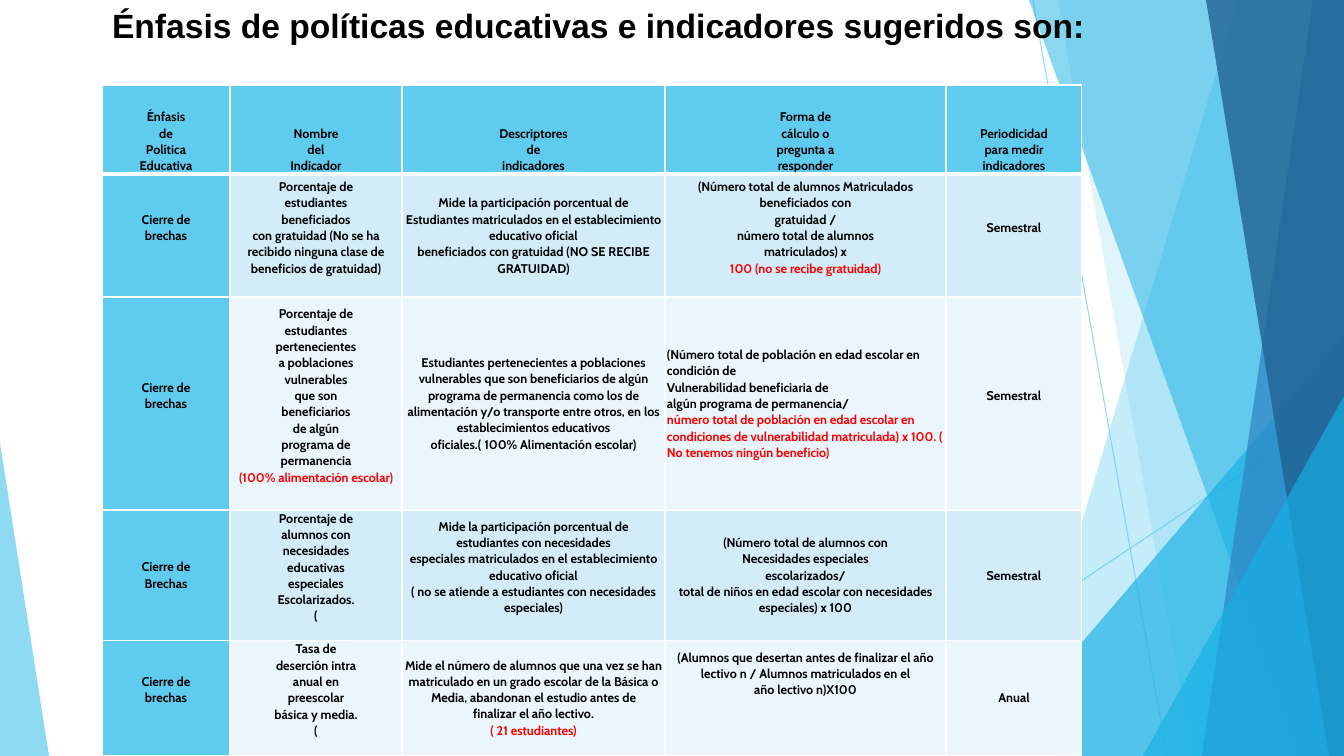
"""Build a slide with a table of education policies and indicators."""
import dataclasses
import typing

import lxml.etree
import pptx
import pptx.dml.color
import pptx.enum.shapes
import pptx.enum.text
import pptx.oxml.ns
import pptx.util

SCALE = 914400 / 100.8
WIDE, HIGH = 1344, 756
LINE = 16
SKY, CYAN, WHITE, BLACK, RED = "5FCBEF", "17B0E4", "FFFFFF", "000000", "FF0000"
BANDS = ("D2ECF9", "EAF6FC")
COLS = (128, 172, 263, 281, 136)
ROWS = (89, 123, 213, 130, 115)
ALIGN = pptx.enum.text.PP_ALIGN
ANCHOR = pptx.enum.text.MSO_ANCHOR
TITLE = "Énfasis de políticas educativas e indicadores sugeridos son:"


@dataclasses.dataclass
class Ray:
    start: tuple[int, int]
    end: tuple[int, int]


@dataclasses.dataclass
class Band:
    top: int
    base: int
    color: str
    alpha: int


@dataclasses.dataclass
class Peak:
    box: tuple[int, int, int, int]
    tip: int
    color: str
    alpha: int


@dataclasses.dataclass
class Entry:
    text: str
    gap: int = 0
    red: bool = False
    left: bool = False


RAYS = (Ray((1033, 0), (1167, HIGH)), Ray((WIDE, 406), (818, HIGH)))
FACETS = (
    Band(1238, 1012, SKY, 36),
    Band(1058, 1192, SKY, 20),
    Peak((985, 336, 359, 420), 1, CYAN, 66),
    Band(1029, 1301, CYAN, 50),
    Band(1313, 1202, "2E83C3", 70),
    Band(1206, 1329, "226292", 80),
    Peak((1143, 396, 201, 360), 1, CYAN, 66),
    Peak((0, 443, 49, 313), 0, SKY, 70),
)
GRID = (
    (
        Entry("Énfasis|de|Política|Educativa"),
        Entry("Nombre|del|Indicador"),
        Entry("Descriptores|de|indicadores"),
        Entry("Forma de|cálculo o|pregunta a|responder"),
        Entry("Periodicidad|para medir|indicadores"),
    ),
    (
        Entry("Cierre de|brechas", 1),
        Entry("Porcentaje de|estudiantes|beneficiados|con gratuidad (No se ha recibido "
              "ninguna clase de beneficios de gratuidad)", 1),
        Entry("Mide la participación porcentual de|Estudiantes matriculados en el "
              "establecimiento educativo oficial|beneficiados con gratuidad "
              "(NO SE RECIBE GRATUIDAD)"),
        Entry("(Número total de alumnos Matriculados beneficiados con|gratuidad /|"
              "número total de alumnos|matriculados) x|100 (no se recibe gratuidad)",
              1, red=True),
        Entry("Semestral", 1),
    ),
    (
        Entry("Cierre de|brechas", 1),
        Entry("Porcentaje de|estudiantes|pertenecientes|a poblaciones|vulnerables|que son|"
              "beneficiarios|de algún|programa de|permanencia|(100% alimentación escolar)",
              1, red=True),
        Entry("Estudiantes pertenecientes a poblaciones vulnerables que son beneficiarios "
              "de algún programa de permanencia como los de alimentación y/o transporte "
              "entre otros, en los establecimientos educativos|"
              "oficiales.( 100% Alimentación escolar)"),
        Entry("(Número total de población en edad escolar en condición de|"
              "Vulnerabilidad beneficiaria de|algún programa de permanencia/|"
              "número total de población en edad escolar en condiciones de vulnerabilidad "
              "matriculada) x 100. ( No tenemos ningún beneficio)", red=True, left=True),
        Entry("Semestral", 1),
    ),
    (
        Entry("Cierre de|Brechas"),
        Entry("Porcentaje de|alumnos con|necesidades|educativas|especiales|"
              "Escolarizados.|(", 1),
        Entry("Mide la participación porcentual de|estudiantes con necesidades|especiales "
              "matriculados en el establecimiento educativo oficial|( no se atiende a "
              "estudiantes con necesidades especiales)", 1),
        Entry("(Número total de alumnos con|Necesidades especiales|escolarizados/|"
              "total de niños en edad escolar con necesidades especiales) x 100"),
        Entry("Semestral"),
    ),
    (
        Entry("Cierre de|brechas", 1),
        Entry("Tasa de|deserción intra|anual en|preescolar|básica y media.|(", 1),
        Entry("Mide el número de alumnos que una vez se han matriculado en un grado escolar "
              "de la Básica o|Media, abandonan el estudio antes de|finalizar el año lectivo.|"
              "( 21 estudiantes)", red=True),
        Entry("(Alumnos que desertan antes de finalizar el año lectivo n / Alumnos "
              "matriculados en el|año lectivo n)X100", 3),
        Entry("Anual"),
    ),
)


def px(*sizes: int) -> list[int]:
    return [round(size * SCALE) for size in sizes]


def rgb(code: str) -> pptx.dml.color.RGBColor:
    return pptx.dml.color.RGBColor.from_string(code)


def apply(thing: typing.Any, **values: typing.Any) -> None:
    for name, value in values.items():
        setattr(thing, name, value)


def paint(fill: typing.Any, code: str) -> None:
    fill.solid()
    fill.fore_color.rgb = rgb(code)


def add_node(parent: typing.Any, tag: str, **values: str) -> typing.Any:
    return lxml.etree.SubElement(parent, pptx.oxml.ns.qn(tag), values)


def fade(shape: typing.Any, alpha: int) -> None:
    for color in shape.element.spPr.iter(pptx.oxml.ns.qn("a:srgbClr")):
        add_node(color, "a:alpha", val=str(alpha * 1000))


def write(par: typing.Any, text: str, font: str, size: int, code: str) -> None:
    run = par.add_run()
    apply(run, text=text)
    apply(run.font, name=font, size=pptx.util.Pt(size), bold=True)
    run.font.color.rgb = rgb(code)


def draw_ray(shapes: typing.Any, ray: Ray) -> None:
    kind = pptx.enum.shapes.MSO_CONNECTOR.STRAIGHT
    line = shapes.add_connector(kind, *px(*ray.start, *ray.end))
    paint(line.line.fill, SKY)
    line.line.width = pptx.util.Pt(0.75)
    fade(line, 70)
    add_node(line.element.spPr, "a:effectLst")


def draw_facet(shapes: typing.Any, facet: Band | Peak) -> None:
    if isinstance(facet, Band):
        pen = shapes.build_freeform(*px(facet.top, 0))
        edge = ((WIDE, 0), (WIDE, HIGH), (facet.base, HIGH))
        pen.add_line_segments([px(*point) for point in edge])
        shape = pen.convert_to_shape()
    else:
        kind = pptx.enum.shapes.MSO_SHAPE.ISOSCELES_TRIANGLE
        shape = shapes.add_shape(kind, *px(*facet.box))
        shape.adjustments[0] = facet.tip
    shape.shadow.inherit = False
    paint(shape.fill, facet.color)
    shape.line.fill.background()
    fade(shape, facet.alpha)


def draw_cell(cell: typing.Any, entry: Entry, row: int, col: int) -> None:
    side, base = px(2, entry.gap * LINE)
    apply(cell, margin_left=side, margin_right=side, margin_top=0, margin_bottom=base,
          vertical_anchor=ANCHOR.MIDDLE if row else ANCHOR.BOTTOM)
    thick = {"a:lnL": 1, "a:lnR": 1, "a:lnT": 3 if row == 1 else 1, "a:lnB": 1 if row else 3}
    for tag, width in thick.items():
        line = add_node(cell._tc.get_or_add_tcPr(), tag, w=str(pptx.util.Pt(width)))
        add_node(add_node(line, "a:solidFill"), "a:srgbClr", val=WHITE)
    paint(cell.fill, BANDS[(row - 1) % 2] if row and col else SKY)
    lines = entry.text.split("|")
    for spot, text in enumerate(lines):
        par = cell.text_frame.add_paragraph() if spot else cell.text_frame.paragraphs[0]
        apply(par, alignment=ALIGN.LEFT if entry.left else ALIGN.CENTER, line_spacing=1.07)
        write(par, text, "Cabin", 9, RED if entry.red and spot == len(lines) - 1 else BLACK)


def draw_table(shapes: typing.Any) -> None:
    box = px(102, 85, sum(COLS), sum(ROWS))
    table = shapes.add_table(len(ROWS), len(COLS), *box).table
    table.horz_banding = False
    for part, width in zip(table.columns, px(*COLS)):
        part.width = width
    for part, height in zip(table.rows, px(*ROWS)):
        part.height = height
    for row, items in enumerate(GRID):
        for col, entry in enumerate(items):
            draw_cell(table.cell(row, col), entry, row, col)


def draw_title(title: typing.Any) -> None:
    left, top, width, height = px(102, 0, 1003, 50)
    apply(title, left=left, top=top, width=width, height=height)
    apply(title.text_frame, word_wrap=True, vertical_anchor=ANCHOR.TOP,
          auto_size=pptx.enum.text.MSO_AUTO_SIZE.NONE)
    par = title.text_frame.paragraphs[0]
    par.alignment = ALIGN.LEFT
    write(par, TITLE, "Arial", 24, BLACK)
    title.element.getparent().append(title.element)


def main() -> None:
    deck = pptx.Presentation()
    deck.slide_width, deck.slide_height = px(WIDE, HIGH)
    shapes = deck.slides.add_slide(deck.slide_layouts[5]).shapes
    for ray in RAYS:
        draw_ray(shapes, ray)
    for facet in FACETS:
        draw_facet(shapes, facet)
    draw_table(shapes)
    draw_title(shapes.title)
    deck.save("out.pptx")


if __name__ == "__main__":
    main()
